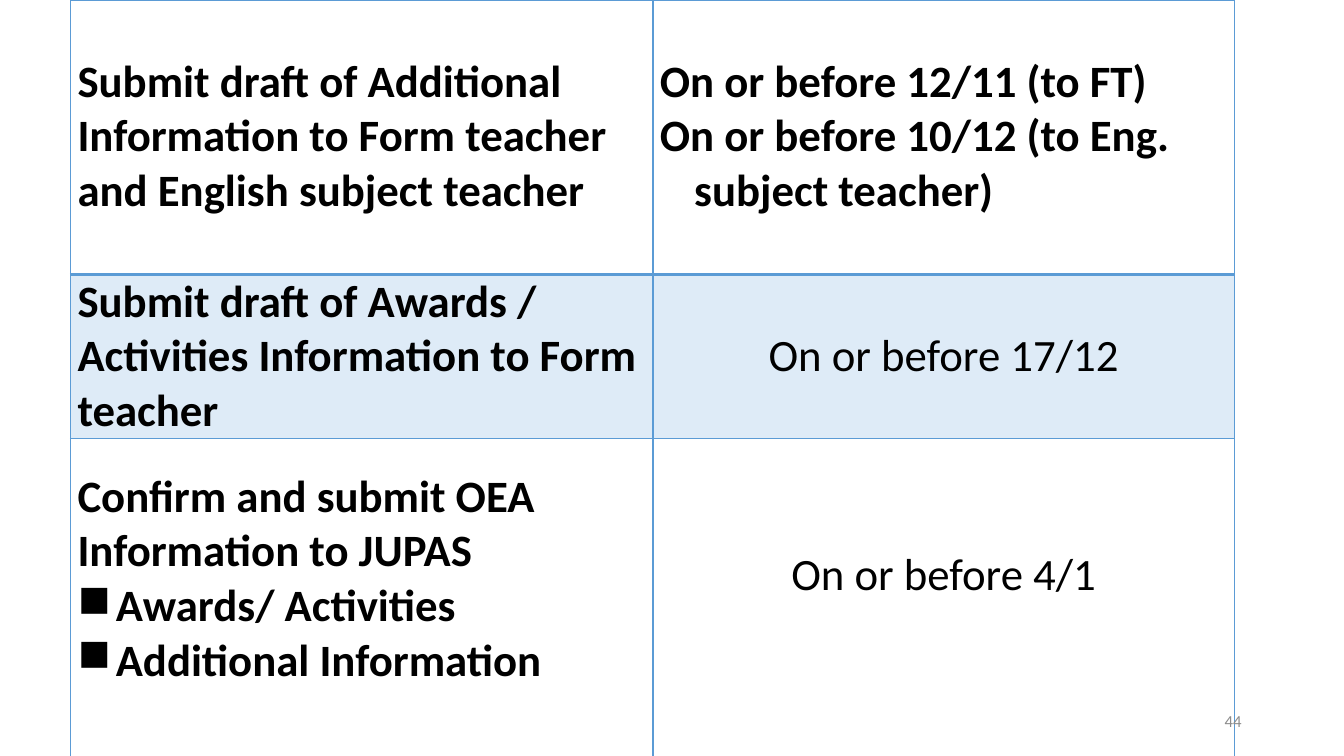
"""Build a slide with a table of submission deadlines."""
from lxml import etree
from pptx import Presentation
from pptx.dml.color import RGBColor
from pptx.enum.text import MSO_ANCHOR, PP_ALIGN
from pptx.oxml.ns import qn
from pptx.util import Pt

LEFT, CENTER, RIGHT = PP_ALIGN.LEFT, PP_ALIGN.CENTER, PP_ALIGN.RIGHT
TOP, MIDDLE = MSO_ANCHOR.TOP, MSO_ANCHOR.MIDDLE

COLORS = {"border": "5B9BD5", "band": "DEEBF7", "plain": "FFFFFF",
          "text": "000000", "number": "8C8C8C"}
FONT = "Calibri"
BULLET = "■"
HANGING = 24.5
BULLET_INDENT = 27.36

TASK = {"bold": True, "align": LEFT}
DATE = {"bold": False, "align": CENTER}

ROWS = [
    {"height": 196, "fill": "plain", "bottom": 2, "cells": [
        {"style": TASK, "top": 39, "anchor": TOP, "indent": HANGING, "lines": [
            "Submit draft of Additional",
            "Information to Form teacher",
            "and English subject teacher"]},
        {"style": TASK, "top": 39, "anchor": TOP, "indent": HANGING, "lines": [
            "On or before 12/11 (to FT)",
            "On or before 10/12 (to Eng. subject teacher)"]}]},
    {"height": 117, "fill": "band", "bottom": 1, "cells": [
        {"style": TASK, "top": 0, "anchor": TOP, "lines": [
            "Submit draft of Awards / Activities Information to Form teacher"]},
        {"style": DATE, "top": 0, "anchor": MIDDLE, "lines": ["On or before 17/12"]}]},
    {"height": 237, "fill": "plain", "bottom": 1, "cells": [
        {"style": TASK, "top": 22, "anchor": TOP, "lines": [
            "Confirm and submit OEA Information to JUPAS"],
         "bullets": ["Awards/ Activities", "Additional Information"]},
        {"style": DATE, "top": 78, "anchor": TOP, "lines": ["On or before 4/1"]}]},
]
COLUMN_WIDTHS = (416, 415.5)
TABLE_LEFT = 50.4
SLIDE_NUMBER = "44"


def color(name):
    return RGBColor.from_string(COLORS[name])


def write(paragraph, text, size, color_name, align, bold=False):
    paragraph.alignment = align
    run = paragraph.add_run()
    run.text = text
    for name, value in {"name": FONT, "size": Pt(size), "bold": bold}.items():
        setattr(run.font, name, value)
    run.font.color.rgb = color(color_name)


def hang(paragraph, indent, bullet=None):
    properties = paragraph._p.get_or_add_pPr()
    properties.set("marL", str(Pt(indent)))
    properties.set("indent", str(-Pt(indent)))
    if bullet:
        etree.SubElement(properties, qn("a:buChar"), char=bullet)


def draw_borders(cell, widths):
    properties = cell._tc.get_or_add_tcPr()
    for index, (side, width) in enumerate(widths.items()):
        line = etree.Element(qn(f"a:ln{side}"), w=str(Pt(width)))
        fill = etree.SubElement(line, qn("a:solidFill"))
        etree.SubElement(fill, qn("a:srgbClr"), val=COLORS["border"])
        properties.insert(index, line)


def fill_cell(cell, content, fill_name, borders):
    margins = {"margin_left": Pt(5), "margin_right": Pt(5),
               "margin_top": Pt(content["top"]), "margin_bottom": Pt(0),
               "vertical_anchor": content["anchor"]}
    for name, value in margins.items():
        setattr(cell, name, value)
    cell.fill.solid()
    cell.fill.fore_color.rgb = color(fill_name)
    draw_borders(cell, borders)
    entries = [(text, content.get("indent"), None) for text in content["lines"]]
    entries += [(text, BULLET_INDENT, BULLET) for text in content.get("bullets", [])]
    frame = cell.text_frame
    for index, (text, indent, bullet) in enumerate(entries):
        paragraph = frame.add_paragraph() if index else frame.paragraphs[0]
        write(paragraph, text, 32, "text", **content["style"])
        if indent:
            hang(paragraph, indent, bullet)


def add_deadlines(slide):
    height = sum(row["height"] for row in ROWS)
    table = slide.shapes.add_table(
        len(ROWS), len(COLUMN_WIDTHS), Pt(TABLE_LEFT), Pt(0),
        Pt(sum(COLUMN_WIDTHS)), Pt(height)).table
    table.first_row = table.horz_banding = False
    for column, width in zip(table.columns, COLUMN_WIDTHS):
        column.width = Pt(width)
    above = 1
    for row_index, row in enumerate(ROWS):
        table.rows[row_index].height = Pt(row["height"])
        borders = {"L": 1, "R": 1, "T": above, "B": row["bottom"]}
        for column_index, content in enumerate(row["cells"]):
            fill_cell(table.cell(row_index, column_index), content, row["fill"], borders)
        above = row["bottom"]


def add_slide_number(slide):
    box = slide.shapes.add_textbox(Pt(678), Pt(500.5), Pt(216), Pt(28.75))
    frame = box.text_frame
    frame.word_wrap = True
    frame.vertical_anchor = MIDDLE
    write(frame.paragraphs[0], SLIDE_NUMBER, 12, "number", RIGHT)


def main():
    presentation = Presentation()
    presentation.slide_width, presentation.slide_height = Pt(960), Pt(540)
    slide = presentation.slides.add_slide(presentation.slide_layouts[6])
    add_deadlines(slide)
    add_slide_number(slide)
    presentation.save("out.pptx")


if __name__ == "__main__":
    main()
